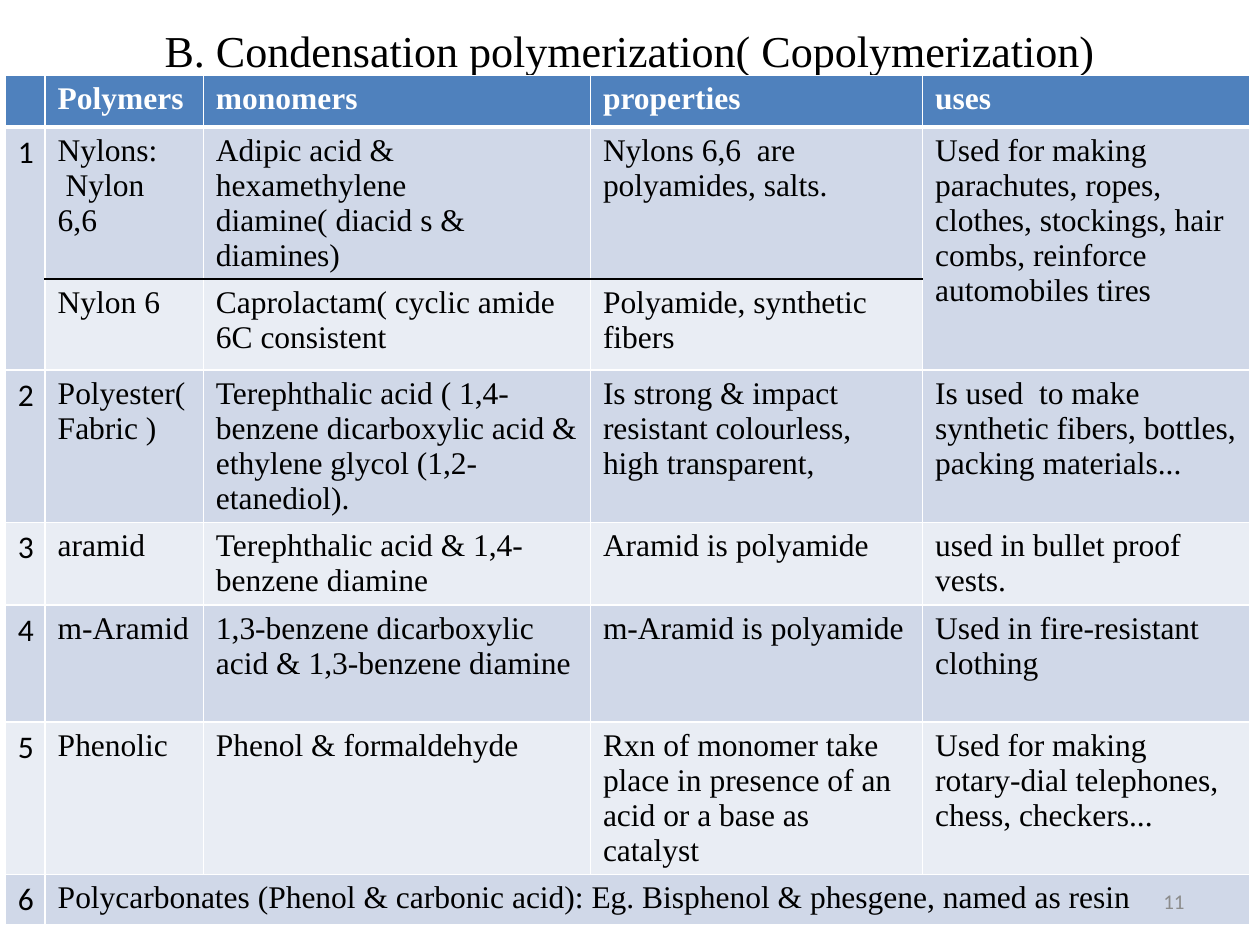
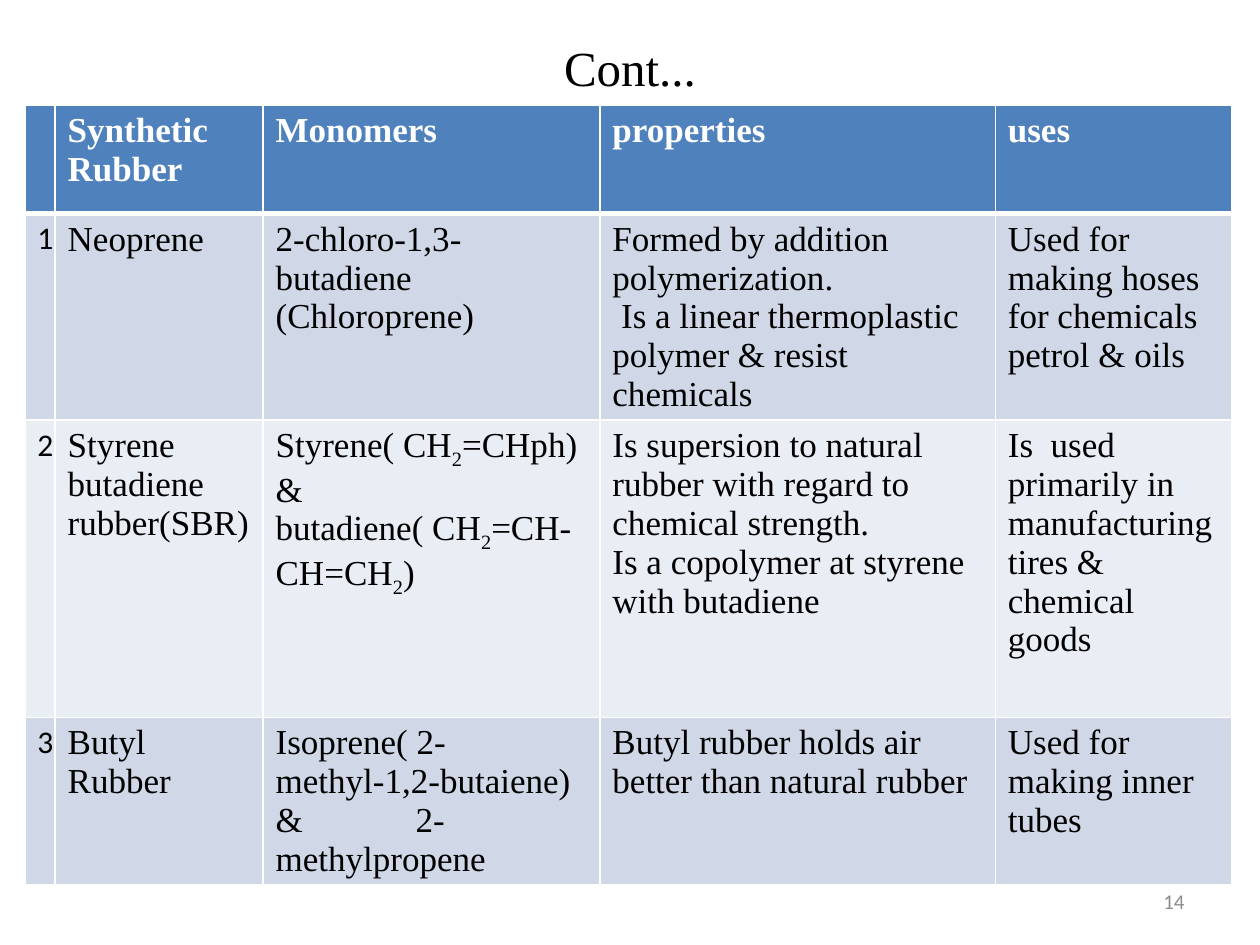
from lxml import etree
from pptx import Presentation
from pptx.dml.color import RGBColor
from pptx.enum.text import MSO_ANCHOR, PP_ALIGN
from pptx.oxml.ns import qn
from pptx.util import Pt

MIDDLE = MSO_ANCHOR.MIDDLE
CENTER, RIGHT = PP_ALIGN.CENTER, PP_ALIGN.RIGHT

WHITE = RGBColor(0xFF, 0xFF, 0xFF)
BLACK = RGBColor(0x00, 0x00, 0x00)
GREY = RGBColor(0x8C, 0x8C, 0x8C)
HEADER_BLUE = RGBColor(0x4F, 0x81, 0xBD)
BANDS = [RGBColor(0xE9, 0xED, 0xF4), RGBColor(0xD0, 0xD8, 0xE8)]

SERIF, SANS = "Times New Roman", "Calibri"
NUMBER_SIZE = 18
LINE_PITCH = 1.11
TAB_STOP = Pt(80)

# In cell text a line break starts a paragraph and _x_ marks a subscript.
SLIDES = [
    {
        "title": "B. Condensation polymerization( Copolymerization)",
        "title_top": 9, "title_height": 39, "title_size": 25.2,
        "page": "11",
        "left": 3, "top": 43, "text_size": 18,
        "columns": [22.8, 90.4, 221.2, 189.8, 186.8],
        "row_heights": [29.5, 87, 52, 87, 47.2, 67, 87, 29],
        "rows": [
            ["", "Polymers", "monomers", "properties", "uses"],
            ["1", "Nylons:\n Nylon 6,6",
             "Adipic acid & hexamethylene diamine( diacid s & diamines)",
             "Nylons 6,6  are polyamides, salts.",
             "Used for making parachutes, ropes, clothes, stockings, "
             "hair combs, reinforce automobiles tires"],
            ["", "Nylon 6", "Caprolactam( cyclic amide 6C consistent",
             "Polyamide, synthetic fibers", ""],
            ["2", "Polyester( Fabric )",
             "Terephthalic acid ( 1,4-benzene dicarboxylic acid & "
             "ethylene glycol (1,2-etanediol).",
             "Is strong & impact resistant colourless, high transparent,",
             "Is used  to make synthetic fibers, bottles, packing materials..."],
            ["3", "aramid", "Terephthalic acid & 1,4-benzene diamine",
             "Aramid is polyamide", "used in bullet proof vests."],
            ["4", "m-Aramid",
             "1,3-benzene dicarboxylic acid & 1,3-benzene diamine",
             "m-Aramid is polyamide", "Used in fire-resistant clothing"],
            ["5", "Phenolic", "Phenol & formaldehyde",
             "Rxn of monomer take place in presence of an acid or a base "
             "as catalyst",
             "Used for making rotary-dial telephones, chess, checkers..."],
            ["6", "Polycarbonates (Phenol & carbonic acid): Eg. Bisphenol & "
             "phesgene, named as resin", "", "", ""],
        ],
        "merges": [(1, 0, 2, 0), (1, 4, 2, 4), (7, 1, 7, 4)],
        "black_rule_below": 1,
    },
    {
        "title": "Cont...",
        "title_top": 21.6, "title_height": 33, "title_size": 28,
        "page": "14",
        "left": 14.2, "top": 60.2, "text_size": 20,
        "columns": [17.3, 118.8, 192.5, 226, 135],
        "row_heights": [61.9, 118, 169.8, 96],
        "rows": [
            ["", "Synthetic Rubber", "Monomers", "properties", "uses"],
            ["1", "Neoprene", "2-chloro-1,3-butadiene (Chloroprene)",
             "Formed by addition polymerization.\n"
             " Is a linear thermoplastic polymer & resist chemicals",
             "Used for making hoses for chemicals petrol & oils"],
            ["2", "Styrene butadiene rubber(SBR)",
             "Styrene( CH_2_=CHph) & butadiene( CH_2_=CH-CH=CH_2_)",
             "Is supersion to natural rubber with regard to chemical strength.\n"
             "Is a copolymer at styrene with butadiene",
             "Is  used primarily in manufacturing tires & chemical goods"],
            ["3", "Butyl Rubber",
             "Isoprene( 2-methyl-1,2-butaiene) &\t2-methylpropene",
             "Butyl rubber holds air better than natural rubber",
             "Used for making inner tubes"],
        ],
        "merges": [],
        "black_rule_below": None,
    },
]


def write(frame, text, font, size, color, bold=False, align=None, pitch=None):
    for index, line in enumerate(text.split("\n")):
        paragraph = frame.paragraphs[0] if index == 0 else frame.add_paragraph()
        if align is not None:
            paragraph.alignment = align
        if pitch and "_" not in line:
            paragraph.line_spacing = Pt(round(size * pitch, 1))
        if "\t" in line:
            stops = etree.SubElement(paragraph._p.get_or_add_pPr(), qn("a:tabLst"))
            etree.SubElement(stops, qn("a:tab"), pos=str(TAB_STOP), algn="l")
        for part, piece in enumerate(line.split("_")):
            if not piece:
                continue
            run = paragraph.add_run()
            run.text = piece
            run.font.name, run.font.size, run.font.bold = font, Pt(size), bold
            run.font.color.rgb = color
            if part % 2:
                run.font._element.set("baseline", "-25000")


def add_border(cell, side, color, width):
    """Side is L, R, T or B; call in that order and before setting the fill."""
    line = etree.SubElement(cell._tc.get_or_add_tcPr(), qn("a:ln" + side),
                            w=str(Pt(width)))
    fill = etree.SubElement(line, qn("a:solidFill"))
    etree.SubElement(fill, qn("a:srgbClr"), val=str(color))


prs = Presentation()
prs.slide_width, prs.slide_height = Pt(720), Pt(540)

for content in SLIDES:
    slide = prs.slides.add_slide(prs.slide_layouts[6])

    title = slide.shapes.add_textbox(Pt(36), Pt(content["title_top"]),
                                     Pt(648), Pt(content["title_height"]))
    title.text_frame.word_wrap = True
    title.text_frame.vertical_anchor = MIDDLE
    write(title.text_frame, content["title"], SERIF, content["title_size"],
          BLACK, align=CENTER)

    rows, columns = content["rows"], content["columns"]
    heights = content["row_heights"]
    polymers = slide.shapes.add_table(
        len(rows), len(columns), Pt(content["left"]), Pt(content["top"]),
        Pt(sum(columns)), Pt(sum(heights))).table
    for column, width in zip(polymers.columns, columns):
        column.width = Pt(width)
    for row, height in zip(polymers.rows, heights):
        row.height = Pt(height)
    for top, left, bottom, right in content["merges"]:
        polymers.cell(top, left).merge(polymers.cell(bottom, right))

    rule_row = content["black_rule_below"]
    for r, texts in enumerate(rows):
        header = r == 0
        for c, text in enumerate(texts):
            cell = polymers.cell(r, c)
            cell.margin_bottom = 0
            ruled = rule_row is not None and 0 < c < len(columns) - 1
            add_border(cell, "L", WHITE, 1)
            add_border(cell, "R", WHITE, 1)
            add_border(cell, "T", BLACK if ruled and r == rule_row + 1 else WHITE,
                       3 if r == 1 else 1)
            add_border(cell, "B", BLACK if ruled and r == rule_row else WHITE,
                       3 if header else 1)
            cell.fill.solid()
            cell.fill.fore_color.rgb = HEADER_BLUE if header else BANDS[r % 2]
            if text and c == 0:
                write(cell.text_frame, text, SANS, NUMBER_SIZE, BLACK)
            elif text:
                write(cell.text_frame, text, SERIF, content["text_size"],
                      WHITE if header else BLACK, bold=header, pitch=LINE_PITCH)

    page = slide.shapes.add_textbox(Pt(516), Pt(500.5), Pt(168), Pt(28.75))
    page.text_frame.word_wrap = True
    page.text_frame.vertical_anchor = MIDDLE
    write(page.text_frame, content["page"], SANS, 12, GREY, align=RIGHT)

prs.save("out.pptx")
